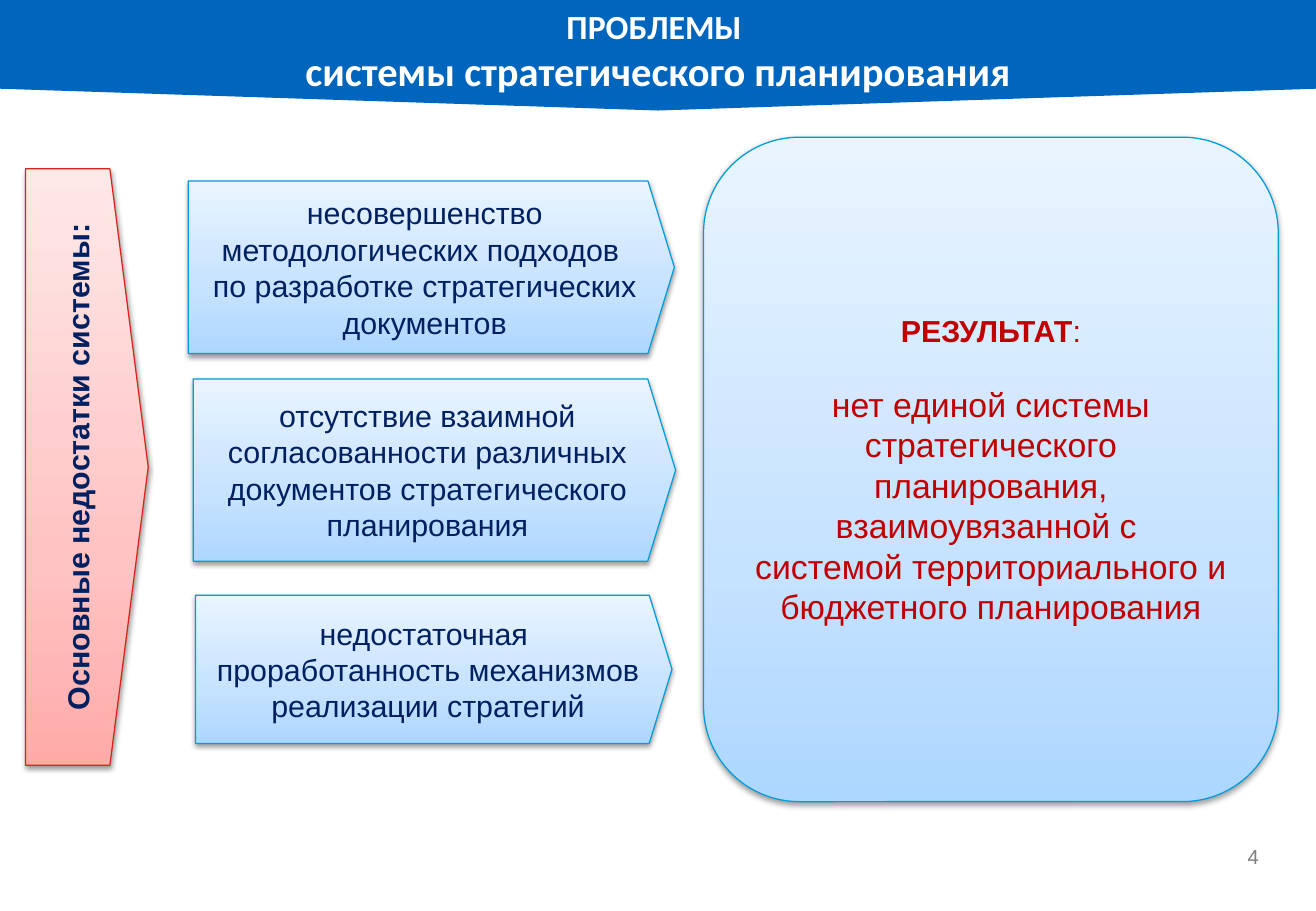
import copy

import pptx
import pptx.dml.color
import pptx.enum.shapes
import pptx.enum.text
import pptx.oxml
import pptx.oxml.ns
import pptx.util
from pptx.dml.color import RGBColor
from pptx.util import Inches

BANNER_BLUE = RGBColor(0x00, 0x65, 0xBD)
WHITE = RGBColor(0xFF, 0xFF, 0xFF)
NAVY = RGBColor(0x00, 0x20, 0x60)
DARK_RED = RGBColor(0xC0, 0x00, 0x00)
GREY = RGBColor(0x7F, 0x7F, 0x7F)
BLUE_LINE = RGBColor(0x00, 0x9D, 0xD9)
RED_LINE = RGBColor(0xD5, 0x26, 0x19)
BLUE_GRADIENT = [RGBColor(0xAD, 0xD7, 0xFF), RGBColor(0xC5, 0xE2, 0xFF), RGBColor(0xE9, 0xF4, 0xFF)]
RED_GRADIENT = [RGBColor(0xFF, 0xAB, 0xA9), RGBColor(0xFF, 0xC3, 0xC3), RGBColor(0xFF, 0xE8, 0xE8)]
STOP_POSITIONS = [0, 0.35, 1]

SHADOW_XML = (
    '<a:outerShdw xmlns:a="http://schemas.openxmlformats.org/drawingml/2006/main" '
    'blurRad="40000" dist="20000" dir="5400000" rotWithShape="0">'
    '<a:srgbClr val="000000"><a:alpha val="38000"/></a:srgbClr></a:outerShdw>'
)

SHAPES = pptx.enum.shapes.MSO_SHAPE
ALIGN = pptx.enum.text.PP_ALIGN
ANCHOR = pptx.enum.text.MSO_ANCHOR


def style_text(paragraph, size, color, font="Arial", bold=False, align=ALIGN.CENTER):
    paragraph.alignment = align
    for run in paragraph.runs:
        run.font.name = font
        run.font.size = pptx.util.Pt(size)
        run.font.bold = bold
        run.font.color.rgb = color


def add_panel(preset, box, colors, line_color, text, text_color, adjustment=None):
    """Add a gradient panel with a soft shadow and centred text."""
    panel = slide.shapes.add_shape(preset, *[Inches(length) for length in box])
    if adjustment is not None:
        panel.adjustments[0] = adjustment
    panel.fill.gradient()
    panel.fill.gradient_angle = 90
    properties = panel.element.spPr
    stop_list = properties.find(".//" + pptx.oxml.ns.qn("a:gsLst"))
    stop_list.insert(1, copy.deepcopy(stop_list[0]))
    for stop, position, color in zip(panel.fill.gradient_stops, STOP_POSITIONS, colors):
        stop.position = position
        stop.color.rgb = color
    panel.line.color.rgb = line_color
    panel.line.width = pptx.util.Pt(0.75)
    panel.shadow.inherit = False
    effects = properties.find(pptx.oxml.ns.qn("a:effectLst"))
    effects.append(pptx.oxml.parse_xml(SHADOW_XML))
    frame = panel.text_frame
    frame.word_wrap = True
    frame.vertical_anchor = ANCHOR.MIDDLE
    frame.text = text
    for paragraph in frame.paragraphs:
        style_text(paragraph, 18, text_color)
    return panel


presentation = pptx.Presentation()
presentation.slide_width = Inches(10.83)
presentation.slide_height = Inches(7.5)
slide = presentation.slides.add_slide(presentation.slide_layouts[6])

# Slide number
page_number = slide.shapes.add_textbox(Inches(9.84), Inches(6.98), Inches(0.52), Inches(0.14))
number_frame = page_number.text_frame
number_frame.margin_left = number_frame.margin_right = 0
number_frame.margin_top = number_frame.margin_bottom = 0
number_frame.vertical_anchor = ANCHOR.MIDDLE
number_frame.word_wrap = False
number_frame.text = "4"
style_text(number_frame.paragraphs[0], 12, GREY, align=ALIGN.RIGHT)

# Title banner
banner = slide.shapes.add_shape(SHAPES.DOWN_ARROW, 0, 0, Inches(10.83), Inches(0.91))
banner.adjustments[0] = 1
banner.adjustments[1] = 0.197
banner.fill.solid()
banner.fill.fore_color.rgb = BANNER_BLUE
banner.line.fill.background()
banner.shadow.inherit = False
banner.text_frame.word_wrap = True
banner.text_frame.vertical_anchor = ANCHOR.TOP
title = banner.text_frame.paragraphs[0]
title.text = "ПРОБЛЕМЫ \vсистемы стратегического планирования"
style_text(title, 24, WHITE, font="Calibri", bold=True)
title.runs[0].font.size = pptx.util.Pt(20)

# Shortcomings
shortcomings = [
    ((1.55, 1.49, 4, 1.42),
     "несовершенство методологических подходов \nпо разработке стратегических документов"),
    ((1.59, 3.12, 3.97, 1.5),
     "отсутствие взаимной согласованности различных документов стратегического планирования"),
    ((1.61, 4.9, 3.92, 1.22),
     "недостаточная \nпроработанность механизмов реализации стратегий"),
]
for box, text in shortcomings:
    add_panel(SHAPES.PENTAGON, box, BLUE_GRADIENT, BLUE_LINE, text, NAVY, 0.153)

# Result
result = add_panel(
    SHAPES.ROUNDED_RECTANGLE, (5.79, 1.13, 4.73, 5.47), BLUE_GRADIENT, BLUE_LINE,
    "РЕЗУЛЬТАТ\nнет единой системы стратегического планирования, взаимоувязанной с \n"
    "системой территориального и бюджетного планирования", DARK_RED)
heading, *conclusion = result.text_frame.paragraphs
heading.add_run().text = ":"
style_text(heading, 18, DARK_RED)
heading.runs[0].font.bold = True
for paragraph in conclusion:
    style_text(paragraph, 20, DARK_RED)
conclusion[0].space_before = pptx.util.Pt(20.7)

# Vertical label
label = add_panel(SHAPES.PENTAGON, (0.21, 1.39, 1.01, 4.91), RED_GRADIENT, RED_LINE,
                  "Основные недостатки системы:", NAVY, 0.312)
label.text_frame.paragraphs[0].runs[0].font.bold = True
label.text_frame._txBody.bodyPr.set("vert", "vert270")

presentation.save("out.pptx")
